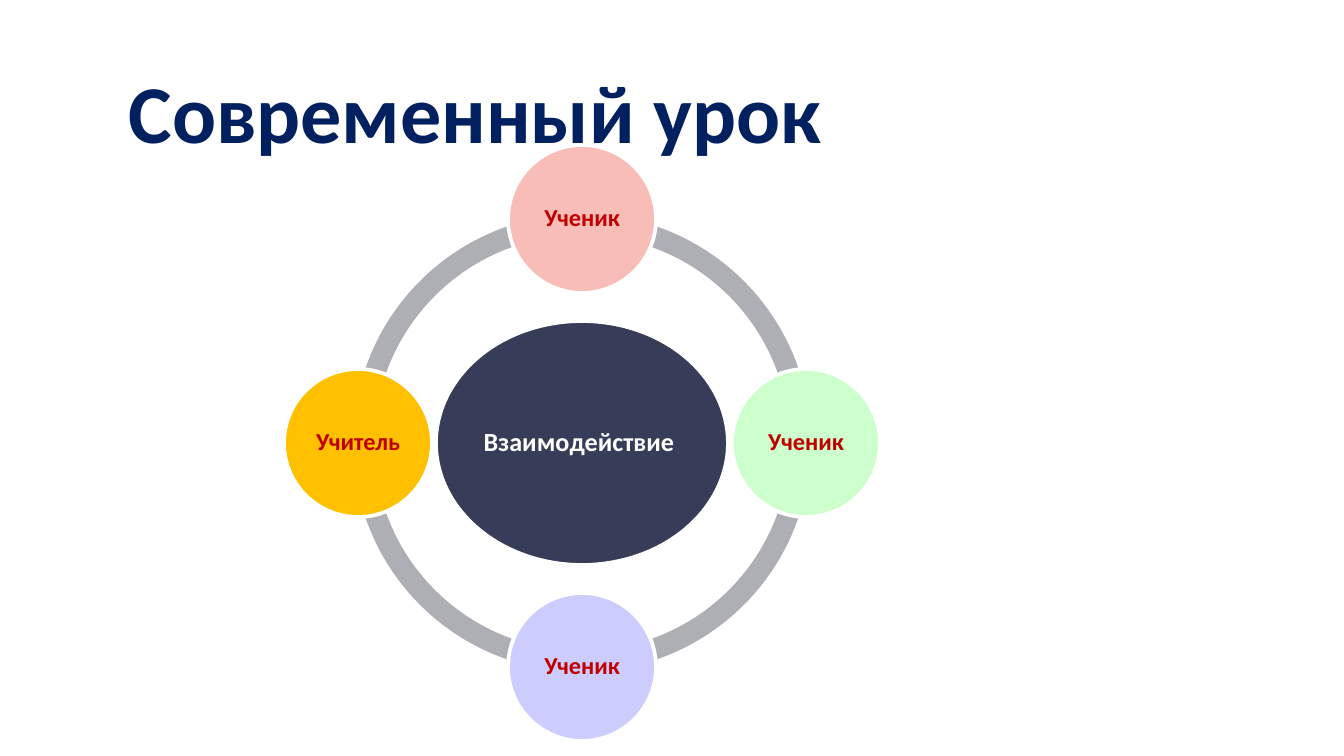
from pptx import Presentation
from pptx.dml.color import RGBColor
from pptx.enum.shapes import MSO_SHAPE
from pptx.enum.text import MSO_ANCHOR, PP_ALIGN
from pptx.util import Emu, Pt

ARC = MSO_SHAPE.BLOCK_ARC
OVAL = MSO_SHAPE.OVAL
TOP = MSO_ANCHOR.TOP
MIDDLE = MSO_ANCHOR.MIDDLE
CENTER = PP_ALIGN.CENTER

EMU_PER_PX = 914400 / 134.4
FONT = "Calibri"
CENTER_X, CENTER_Y = 582, 443
ORBIT = 224
RING_SIZE = 458
NODE_SIZE = 148
HUB_WIDTH, HUB_HEIGHT = 292, 244
QUARTER_TURN = 54
FULL_TURN = 216
RING_THICKNESS = 0.046

NODES = [
    ("Ученик", "F9BDB8", 0, -1),
    ("Ученик", "CCFFCC", 1, 0),
    ("Ученик", "CCCCFF", 0, 1),
    ("Учитель", "FFC000", -1, 0),
]


def px(length):
    """Turn pixels into EMU."""
    return Emu(round(length * EMU_PER_PX))


def rgb(value):
    """Turn a hex string into a colour."""
    return RGBColor.from_string(value)


def write_text(shape, text, size, color, anchor, inset):
    """Put one bold centred line of text into a shape."""
    text_frame = shape.text_frame
    text_frame.text = text
    text_frame.word_wrap = True
    text_frame.vertical_anchor = anchor
    text_frame.margin_left = text_frame.margin_right = px(inset)
    text_frame.margin_top = text_frame.margin_bottom = px(inset)
    paragraph = text_frame.paragraphs[0]
    paragraph.alignment = CENTER
    font = paragraph.runs[0].font
    font.name = FONT
    font.size = Pt(size)
    font.bold = True
    font.color.rgb = rgb(color)


def add_title(slide, text):
    """Add the slide heading."""
    title = slide.shapes.add_textbox(px(47), px(51), px(857), px(94))
    write_text(title, text, 44, "002060", TOP, 10)


def add_centered(slide, kind, x, y, width, height, fill):
    """Add a filled shape around a centre point."""
    shape = slide.shapes.add_shape(
        kind, px(x - width / 2), px(y - height / 2), px(width), px(height))
    shape.shadow.inherit = False
    shape.fill.solid()
    shape.fill.fore_color.rgb = rgb(fill)
    shape.line.fill.background()
    return shape


def add_ring(slide):
    """Add the ring as four quarter arcs."""
    for quarter in range(4):
        start = quarter * QUARTER_TURN
        arc = add_centered(slide, ARC, CENTER_X, CENTER_Y,
                           RING_SIZE, RING_SIZE, "AEAFB5")
        arc.adjustments[0] = start
        arc.adjustments[1] = (start + QUARTER_TURN) % FULL_TURN
        arc.adjustments[2] = RING_THICKNESS


def add_oval(slide, text, x, y, width, height, fill, size, color):
    """Add a white-edged oval with a label."""
    oval = add_centered(slide, OVAL, x, y, width, height, fill)
    oval.line.color.rgb = rgb("FFFFFF")
    oval.line.width = Pt(2)
    write_text(oval, text, size, color, MIDDLE, 2)
    oval.text_frame.paragraphs[0].line_spacing = 0.9


def main():
    """Build the slide and save it."""
    presentation = Presentation()
    presentation.slide_width = px(1344)
    presentation.slide_height = px(756)
    slide = presentation.slides.add_slide(presentation.slide_layouts[6])
    add_title(slide, "Современный урок")
    add_ring(slide)
    add_oval(slide, "Взаимодействие ", CENTER_X, CENTER_Y,
             HUB_WIDTH, HUB_HEIGHT, "373C59", 14, "FFFFFF")
    for text, fill, step_x, step_y in NODES:
        add_oval(slide, text, CENTER_X + step_x * ORBIT,
                 CENTER_Y + step_y * ORBIT, NODE_SIZE, NODE_SIZE,
                 fill, 13, "C00000")
    presentation.save("out.pptx")


if __name__ == "__main__":
    main()
